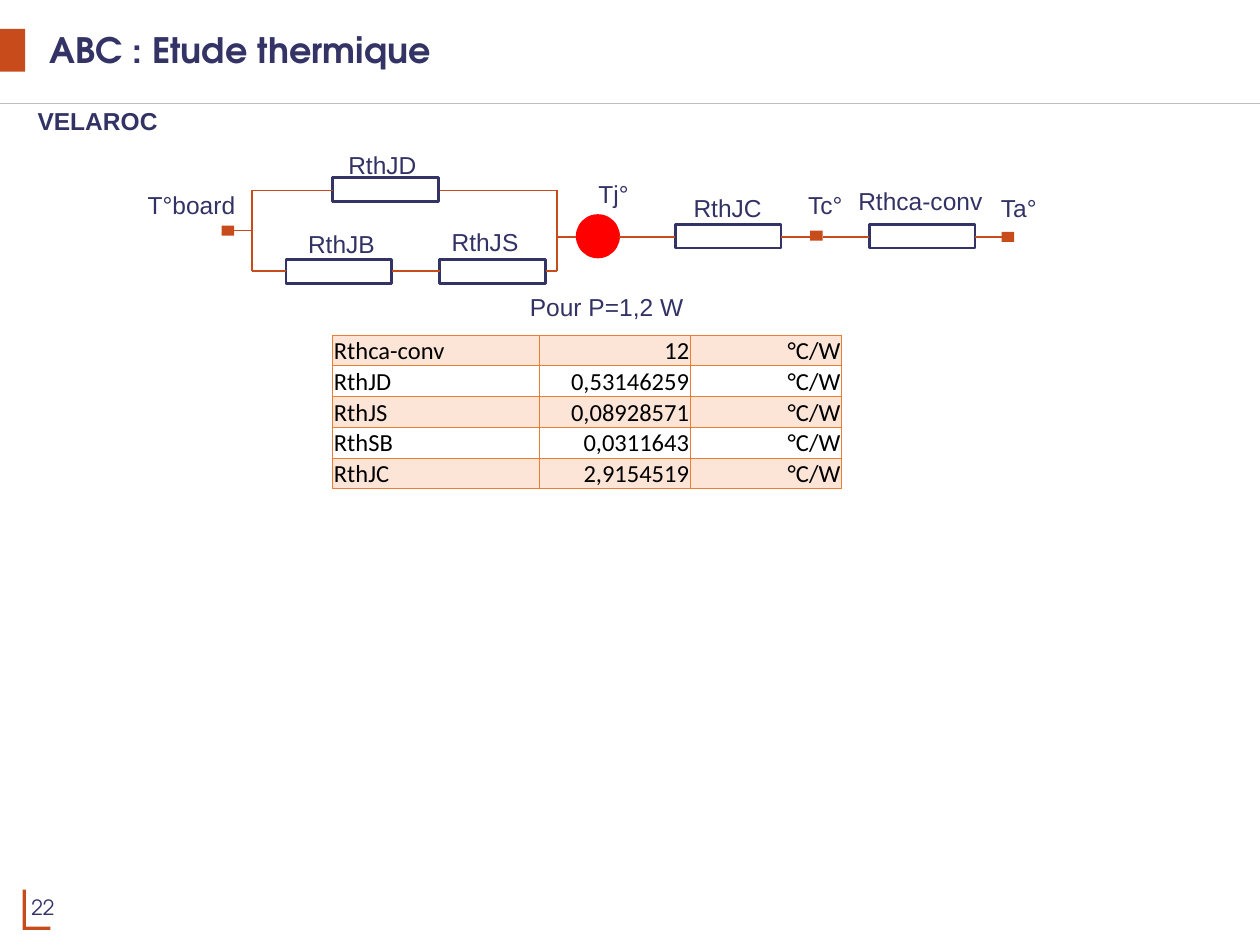
from lxml import etree
from pptx import Presentation
from pptx.dml.color import RGBColor
from pptx.enum.shapes import MSO_CONNECTOR, MSO_SHAPE
from pptx.enum.text import MSO_ANCHOR, PP_ALIGN
from pptx.oxml.ns import qn
from pptx.util import Inches, Pt

LEFT, CENTER, RIGHT = PP_ALIGN.LEFT, PP_ALIGN.CENTER, PP_ALIGN.RIGHT
MIDDLE, BOTTOM = MSO_ANCHOR.MIDDLE, MSO_ANCHOR.BOTTOM
RECT, OVAL = MSO_SHAPE.RECTANGLE, MSO_SHAPE.OVAL
STRAIGHT = MSO_CONNECTOR.STRAIGHT

NAVY, INK, RUST = "333366", "323265", "C84B1B"
HEADING_FONT = "TeX Gyre Adventor"
COLUMNS = 100
SLIDE_WIDTH = 10
RESISTOR = (8.4, 1.9)
NODE = (1, 0.8)

RESISTORS = [(26.4, 14.1), (22.7, 20.6), (34.9, 20.6), (53.6, 17.8), (69, 17.8)]
NODES = [(17.6, 17.9), (64.3, 18.3), (79.5, 18.4)]
WIRES = [
    [(18, 18.3), (20, 18.3)],
    [(26.4, 15.1), (20, 15.1), (20, 21.5), (22.7, 21.5)],
    [(31.1, 21.5), (34.9, 21.5)],
    [(34.9, 15.1), (44.2, 15.1), (44.2, 21.5), (43.3, 21.5)],
    [(44.2, 18.8), (45.7, 18.8)],
    [(49.1, 18.8), (53.6, 18.8)],
    [(62, 18.8), (64.3, 18.8)],
    [(65.3, 18.8), (69, 18.8)],
    [(77.4, 18.8), (80, 18.8)],
]
LABELS = [
    ("Pour P=1,2 W", 41, 22.7, 14.3),
    ("RthJD", 26.6, 11.4, 7.5),
    ("RthJB", 23.4, 17.7, 7.4),
    ("RthJS", 34.8, 17.5, 7.4),
    ("RthJC", 54, 14.8, 7.5),
    ("T°board", 10.7, 14.6, 9),
    ("Tj°", 46.5, 13.7, 4.4),
    ("Tc°", 63.1, 14.6, 4.8),
    ("Ta°", 78.4, 14.8, 4.9),
    ("Rthca-conv", 67.1, 14.3, 11.9),
]
VALUES = [
    ("Rthca-conv", "12"),
    ("RthJD", "0,53146259"),
    ("RthJS", "0,08928571"),
    ("RthSB", "0,0311643"),
    ("RthJC", "2,9154519"),
]


def grid(*cells):
    return [Inches(cell * SLIDE_WIDTH / COLUMNS) for cell in cells]


def rgb(color):
    return RGBColor.from_string(color)


def write(tf, text, font="Arial", size=14, color=INK, bold=False, align=LEFT):
    tf.text = text
    p = tf.paragraphs[0]
    p.alignment = align
    r = p.runs[0]
    r.font.name, r.font.size, r.font.bold = font, Pt(size), bold
    r.font.color.rgb = rgb(color)


def add_label(slide, text, x, y, w, h=3.4, **style):
    tf = slide.shapes.add_textbox(*grid(x, y, w, h)).text_frame
    tf.word_wrap = False
    write(tf, text, **style)
    return tf


def paint(sp, fill=None, line=None):
    sp.shadow.inherit = False
    if fill:
        sp.fill.solid()
        sp.fill.fore_color.rgb = rgb(fill)
    else:
        sp.fill.background()
    if line:
        sp.line.color.rgb = rgb(line)
        sp.line.width = Pt(1.5)
    else:
        sp.line.fill.background()


def add_block(slide, kind, x, y, w, h, fill=None, line=None):
    paint(slide.shapes.add_shape(kind, *grid(x, y, w, h)), fill, line)


def add_line(slide, start, end, color=RUST):
    cxn = slide.shapes.add_connector(STRAIGHT, *grid(*start, *end))
    cxn.line.color.rgb = rgb(color)
    cxn.line.width = Pt(0.75)
    etree.SubElement(cxn._element.spPr, qn("a:effectLst"))


def add_corner(slide):
    x, y, w, h, thick = 1.8, 70.6, 2.2, 3.2, 0.25
    points = [(x, y), (x, y + h), (x + w, y + h), (x + w, y + h - thick),
              (x + thick, y + h - thick), (x + thick, y)]
    start, *rest = [grid(*point) for point in points]
    builder = slide.shapes.build_freeform(*start)
    builder.add_line_segments(rest)
    paint(builder.convert_to_shape(), RUST)


def add_frame(slide):
    add_line(slide, (0, 8.2), (COLUMNS, 8.2), "BFBFBF")
    add_block(slide, RECT, 0, 2.3, 2, 3.4, fill=RUST)
    add_corner(slide)
    number = add_label(slide, "22", 1.5, 70, 8.6, 4, font=HEADING_FONT,
                       size=12, color=NAVY)
    number.vertical_anchor = MIDDLE

    title = slide.shapes.title
    title.left, title.top, title.width, title.height = grid(2.9, 0, 94.9, 8.2)
    tf = title.text_frame
    tf.vertical_anchor = MIDDLE
    write(tf, "ABC : Etude thermique", HEADING_FONT, 20, NAVY, True)
    tf.paragraphs[0].line_spacing = 0.9


def add_circuit(slide):
    for x, y in RESISTORS:
        add_block(slide, RECT, x, y, *RESISTOR, line=NAVY)
    add_block(slide, OVAL, 45.7, 17, 3.5, 3.5, fill="FF0000")
    for wire in WIRES:
        for start, end in zip(wire, wire[1:]):
            add_line(slide, start, end)
    for x, y in NODES:
        add_block(slide, RECT, x, y, *NODE, fill=RUST)
    for text, x, y, w in LABELS:
        add_label(slide, text, x, y, w, align=CENTER)


def add_borders(cell, color):
    tcPr = cell._tc.get_or_add_tcPr()
    for side in ("a:lnL", "a:lnR", "a:lnT", "a:lnB"):
        ln = etree.SubElement(tcPr, qn(side), w=str(Pt(0.5)))
        fill = etree.SubElement(ln, qn("a:solidFill"))
        etree.SubElement(fill, qn("a:srgbClr"), val=color)


def add_values(slide):
    frame = slide.shapes.add_table(len(VALUES), 3, *grid(26.4, 26.6, 40.4, 12.2))
    table = frame.table
    table.first_row = table.horz_banding = False
    for column, width in zip(table.columns, grid(16.4, 12, 12)):
        column.width = width
    for i, (name, value) in enumerate(VALUES):
        for j, text in enumerate((name, value, "°C/W")):
            cell = table.cell(i, j)
            cell.margin_left = cell.margin_right = cell.margin_top = Inches(0.01)
            cell.margin_bottom = 0
            cell.vertical_anchor = BOTTOM
            write(cell.text_frame, text, "Calibri", color="000000",
                  align=RIGHT if j else LEFT)
            add_borders(cell, "ED7D31")
            if i % 2:
                cell.fill.background()
            else:
                cell.fill.solid()
                cell.fill.fore_color.rgb = rgb("FCE4D6")


def main():
    prs = Presentation()
    prs.slide_width, prs.slide_height = Inches(SLIDE_WIDTH), Inches(7.5)
    slide = prs.slides.add_slide(prs.slide_layouts[5])
    add_frame(slide)
    add_circuit(slide)
    add_label(slide, "VELAROC", 2, 7.9, 13, bold=True)
    add_values(slide)
    prs.save("out.pptx")


if __name__ == "__main__":
    main()
